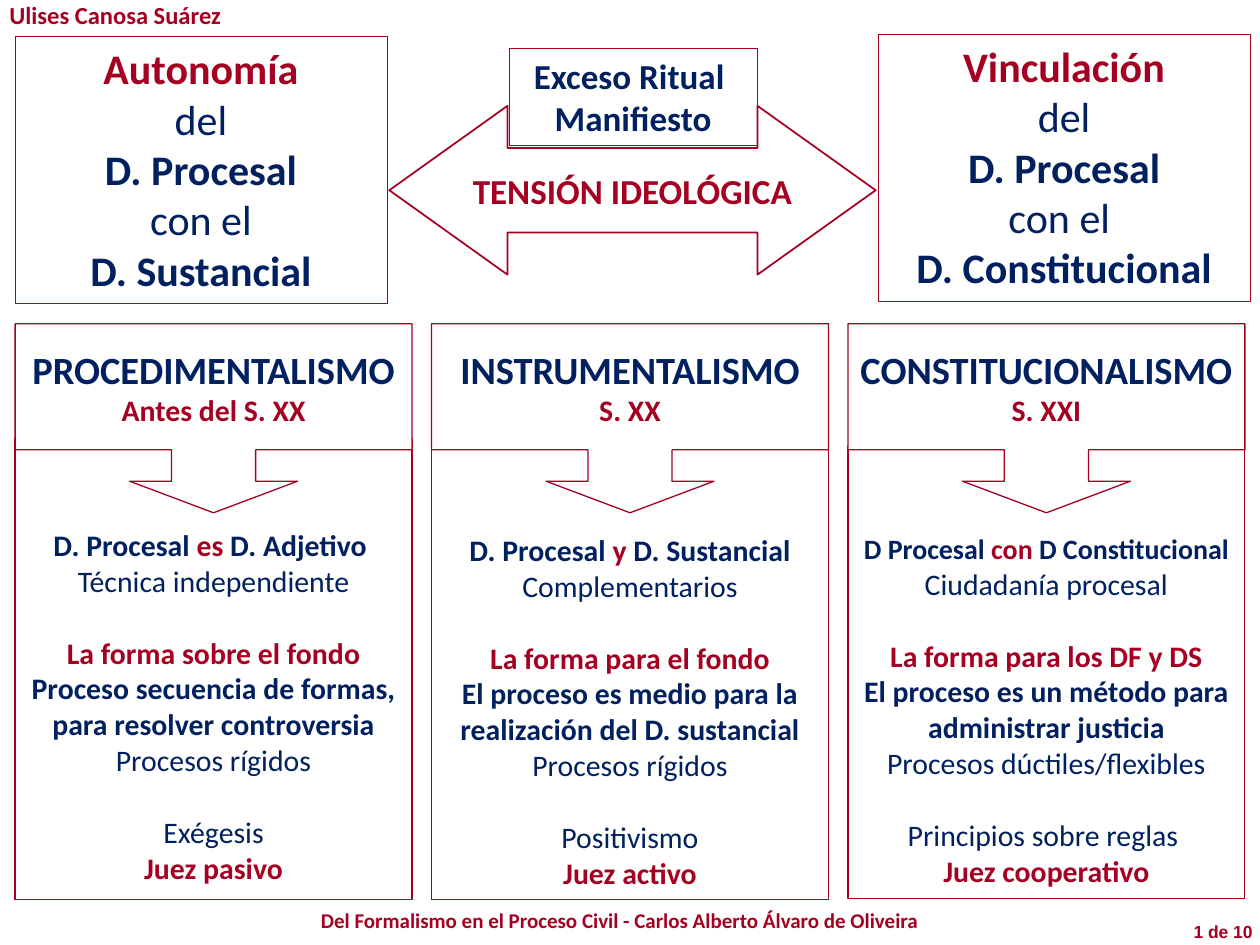
from pptx import Presentation
from pptx.dml.color import RGBColor
from pptx.enum.shapes import MSO_SHAPE as Shape
from pptx.enum.text import MSO_ANCHOR as Anchor, PP_ALIGN as Align
from pptx.util import Inches, Pt

COLORS = {"red": "A50021", "navy": "002060", "white": "FFFFFF"}
STYLES = {"key": ("red", True), "strong": ("navy", True), "plain": ("navy", False)}
LINE_GAP = 20.75
COLUMN_LEFT, COLUMN_STEP, COLUMN_WIDTH = 0.12, 3.305, 3.15

COLUMNS = [
    {
        "heading": "PROCEDIMENTALISMO", "period": "Antes del S. XX",
        "body_top": 3.48, "text_top": 4.18, "bottom": 7.14,
        "relation": [("D. Procesal ", "strong"), ("es", "key"), (" D. Adjetivo ", "strong")],
        "relation_size": 17,
        "nature": "Técnica independiente",
        "form": "La forma sobre el fondo",
        "process": "Proceso secuencia de formas, para resolver controversia",
        "rigidity": "Procesos rígidos",
        "school": "Exégesis",
        "judge": "Juez pasivo",
    },
    {
        "heading": "INSTRUMENTALISMO", "period": "S. XX",
        "body_top": 3.11, "text_top": 4.22, "bottom": 7.14,
        "relation": [("D. Procesal ", "strong"), ("y", "key"), (" D. Sustancial", "strong")],
        "relation_size": 17,
        "nature": "Complementarios",
        "form": "La forma para el fondo",
        "process": "El proceso es medio para la realización del D. sustancial",
        "rigidity": "Procesos rígidos",
        "school": "Positivismo",
        "judge": "Juez activo",
    },
    {
        "heading": "CONSTITUCIONALISMO", "period": "S. XXI",
        "body_top": 3.54, "text_top": 4.22, "bottom": 7.13,
        "relation": [("D Procesal ", "strong"), ("con", "key"), (" D Constitucional", "strong")],
        "relation_size": 16,
        "nature": "Ciudadanía procesal",
        "form": "La forma para los DF y DS",
        "process": "El proceso es un método para administrar justicia",
        "rigidity": "Procesos dúctiles/flexibles",
        "school": "Principios sobre reglas ",
        "judge": "Juez cooperativo",
    },
]


def color(name):
    return RGBColor.from_string(COLORS[name])


def line(text, style, size, gap=0):
    return [(text, style)], size, gap


def write_lines(frame, lines, align=Align.CENTER, font="Calibri"):
    for index, (spans, size, gap) in enumerate(lines):
        para = frame.paragraphs[0] if index == 0 else frame.add_paragraph()
        para.alignment = align
        para.space_before = Pt(gap)
        para.font.name = font
        para.font.size = Pt(size)
        first_color, para.font.bold = STYLES[spans[0][1]]
        para.font.color.rgb = color(first_color)
        for text, style in spans:
            span = para.add_run()
            span.text = text
            if STYLES[style][0] != first_color:
                span.font.color.rgb = color(STYLES[style][0])


def add_outline(page, kind, place, lines, weight, fill=None, anchor=Anchor.MIDDLE, wrap=True):
    shape = page.shapes.add_shape(kind, *map(Inches, place))
    shape.shadow.inherit = False
    if fill:
        shape.fill.solid()
        shape.fill.fore_color.rgb = color(fill)
    else:
        shape.fill.background()
    shape.line.color.rgb = color("red")
    shape.line.width = Pt(weight)
    shape.text_frame.word_wrap = wrap
    shape.text_frame.vertical_anchor = anchor
    write_lines(shape.text_frame, lines)
    return shape


def add_label(page, place, text, size, align=Align.CENTER, font="Calibri"):
    box = page.shapes.add_textbox(*map(Inches, place))
    box.text_frame.word_wrap = True
    write_lines(box.text_frame, [line(text, "key", size)], align, font)


def add_position(page, left, top, stance, link, right_field):
    lines = [
        line(stance, "key", 24),
        line("del", "plain", 24),
        line("D. Procesal", "strong", 24),
        line(link, "plain", 24),
        line(right_field, "strong", 24),
    ]
    add_outline(page, Shape.RECTANGLE, (left, top, 2.95, 2.12), lines, 0.25, anchor=Anchor.TOP)


def add_tension(page):
    arrow = add_outline(page, Shape.LEFT_RIGHT_ARROW, (3.09, 0.84, 3.86, 1.34),
                        [line("TENSIÓN IDEOLÓGICA", "key", 20)], 1)
    arrow.adjustments[0], arrow.adjustments[1] = 0.5, 0.7
    add_outline(page, Shape.RECTANGLE, (4.04, 0.38, 1.97, 0.77),
                [line("Exceso Ritual ", "strong", 20), line("Manifiesto", "strong", 20)],
                0.25, anchor=Anchor.TOP)


def add_column(page, left, column):
    top = column["body_top"]
    lines = [
        (column["relation"], column["relation_size"], 0),
        line(column["nature"], "plain", 17),
        line(column["form"], "key", 17, LINE_GAP),
        line(column["process"], "strong", 17),
        line(column["rigidity"], "plain", 17),
        line(column["school"], "plain", 17, LINE_GAP),
        line(column["judge"], "key", 17),
    ]
    body = add_outline(page, Shape.RECTANGLE, (left, top, COLUMN_WIDTH, column["bottom"] - top),
                       lines, 0.75, "white", Anchor.TOP)
    body.text_frame.margin_top = Inches(column["text_top"] - top)

    heading = [line(column["heading"], "strong", 22), line(column["period"], "key", 17)]
    callout = add_outline(page, Shape.DOWN_ARROW_CALLOUT, (left, 2.57, COLUMN_WIDTH, 1.5),
                          heading, 0.75, "white", wrap=False)
    for index, value in enumerate((0.445, 0.445, 0.167, 0.667)):
        callout.adjustments[index] = value


def main():
    deck = Presentation()
    deck.slide_width, deck.slide_height = Inches(10), Inches(7.5)
    page = deck.slides.add_slide(deck.slide_layouts[6])

    add_label(page, (-0.11, -0.05, 2.05, 0.34), "Ulises Canosa Suárez", 14)
    for index, column in enumerate(COLUMNS):
        add_column(page, COLUMN_LEFT + index * COLUMN_STEP, column)
    add_position(page, 0.12, 0.29, "Autonomía", "con el", "D. Sustancial")
    add_position(page, 6.97, 0.27, "Vinculación", "con el ", "D. Constitucional")
    add_tension(page)
    add_label(page, (1.77, 7.15, 6.3, 0.3),
              "Del Formalismo en el Proceso Civil - Carlos Alberto Álvaro de Oliveira", 12)
    add_label(page, (9.06, 7.26, 0.98, 0.27), "1 de 10", 10, Align.RIGHT, "Arial")
    deck.save("out.pptx")


if __name__ == "__main__":
    main()
